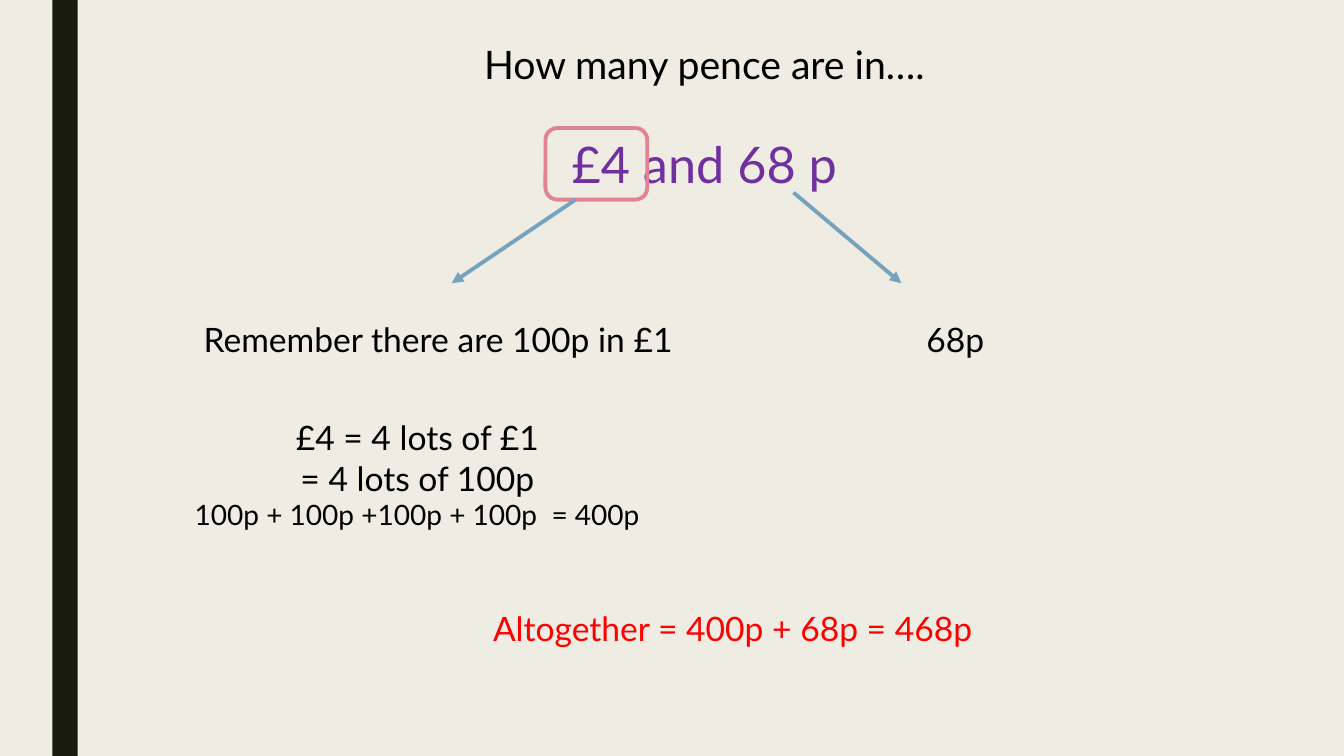
from lxml.etree import SubElement
from pptx import Presentation
from pptx.dml.color import RGBColor
from pptx.enum.shapes import MSO_CONNECTOR, MSO_SHAPE
from pptx.enum.text import MSO_AUTO_SIZE, PP_ALIGN
from pptx.oxml.ns import qn
from pptx.util import Inches, Pt

CREAM = RGBColor(0xEF, 0xED, 0xE3)
DARK = RGBColor(0x19, 0x1B, 0x0E)
BLACK = RGBColor(0x00, 0x00, 0x00)
PURPLE = RGBColor(0x70, 0x30, 0xA0)
RED = RGBColor(0xFF, 0x00, 0x00)
PINK = RGBColor(0xE2, 0x83, 0x94)
BLUE = RGBColor(0x77, 0xA2, 0xBB)
FONT = "Lato"
LINE_WIDTH = Pt(2.75)


def add_text(page, left, top, width, height, lines, color=BLACK):
    """Add centred paragraphs, each given as (text, size)."""
    box = page.shapes.add_textbox(Inches(left), Inches(top), Inches(width), Inches(height))
    frame = box.text_frame
    frame.word_wrap = True
    frame.auto_size = MSO_AUTO_SIZE.SHAPE_TO_FIT_TEXT
    frame.text = "\n".join(text for text, size in lines)
    for para, (text, size) in zip(frame.paragraphs, lines):
        para.alignment = PP_ALIGN.CENTER
        font = para.runs[0].font
        font.name = FONT
        font.size = Pt(size)
        font.color.rgb = color


def add_side_bar(page):
    bar = page.shapes.add_shape(
        MSO_SHAPE.RECTANGLE, Inches(0.52), Inches(0), Inches(0.25), Inches(7.5))
    bar.shadow.inherit = False
    bar.fill.solid()
    bar.fill.fore_color.rgb = DARK
    bar.line.fill.background()


def add_pounds_frame(page):
    frame = page.shapes.add_shape(
        MSO_SHAPE.ROUNDED_RECTANGLE, Inches(5.41), Inches(1.27), Inches(1.01), Inches(0.71))
    frame.shadow.inherit = False
    frame.fill.background()
    frame.line.color.rgb = PINK
    frame.line.width = LINE_WIDTH


def add_arrow(page, start, end):
    points = [Inches(value) for value in (*start, *end)]
    arrow = page.shapes.add_connector(MSO_CONNECTOR.STRAIGHT, *points)
    arrow.line.color.rgb = BLUE
    arrow.line.width = LINE_WIDTH
    SubElement(arrow.line._get_or_add_ln(), qn("a:tailEnd"), type="triangle")
    SubElement(arrow._element.spPr, qn("a:effectLst"))


def main():
    deck = Presentation()
    deck.slide_width = Inches(13.33)
    deck.slide_height = Inches(7.5)
    page = deck.slides.add_slide(deck.slide_layouts[6])
    page.background.fill.solid()
    page.background.fill.fore_color.rgb = CREAM
    add_side_bar(page)

    # Question
    add_text(page, 1.69, 0.35, 10.59, 0.57, [("How many pence are in….", 28)])
    add_text(page, 1.69, 1.27, 10.59, 0.71, [("£4 and 68 p", 36)], PURPLE)
    add_pounds_frame(page)

    # Pounds branch
    add_arrow(page, (5.71, 1.98), (4.48, 2.81))
    add_text(page, 1.86, 3.11, 4.97, 0.5, [("Remember there are 100p in £1", 24)])
    add_text(page, 1.46, 4.09, 5.36, 1.25, [
        ("£4 = 4 lots of £1", 24),
        ("= 4 lots of 100p", 24),
        ("100p + 100p +100p + 100p  = 400p", 20),
    ])

    # Pence branch
    add_arrow(page, (7.87, 1.91), (8.94, 2.81))
    add_text(page, 6.99, 3.11, 4.97, 0.5, [("68p", 24)])

    # Total
    add_text(page, 1.97, 5.98, 10.59, 0.5, [("Altogether = 400p + 68p = 468p", 24)], RED)

    deck.save("out.pptx")


if __name__ == "__main__":
    main()
